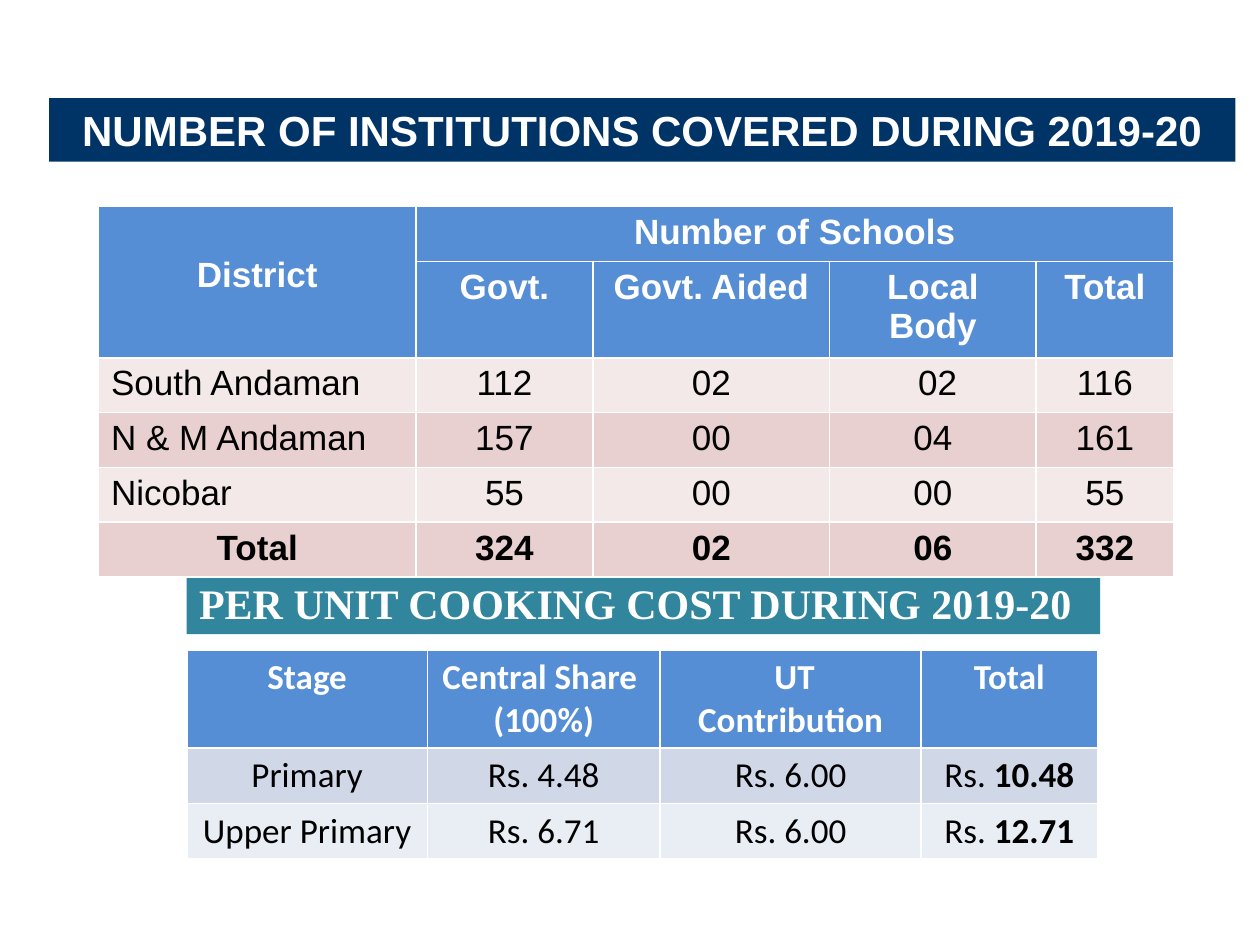
from pptx import Presentation
from pptx.dml.color import RGBColor
from pptx.enum.shapes import MSO_SHAPE
from pptx.enum.text import MSO_ANCHOR, PP_ALIGN
from pptx.util import Pt

CENTER, LEFT = PP_ALIGN.CENTER, PP_ALIGN.LEFT
TOP, MIDDLE = MSO_ANCHOR.TOP, MSO_ANCHOR.MIDDLE
WHITE = RGBColor(0xFF, 0xFF, 0xFF)
BLACK = RGBColor(0x00, 0x00, 0x00)
NAVY = RGBColor(0x00, 0x33, 0x66)
TEAL = RGBColor(0x31, 0x85, 0x9C)
HEADER_BLUE = RGBColor(0x55, 0x8E, 0xD5)
PINK_BANDS = (RGBColor(0xF4, 0xE9, 0xE9), RGBColor(0xE8, 0xD0, 0xD0))
BLUE_BANDS = (RGBColor(0xD0, 0xD8, 0xE8), RGBColor(0xE9, 0xED, 0xF4))

# Content
TITLE = "NUMBER OF INSTITUTIONS COVERED DURING 2019-20"
COST_HEADING = "PER UNIT COOKING COST DURING 2019-20"
SCHOOLS = [
    ["District", "Number of Schools", "", "", ""],
    ["", "Govt.", "Govt. Aided", "Local Body", "Total"],
    ["South Andaman", "112", "02", " 02", "116"],
    ["N & M Andaman", "157", "00", "04", "161"],
    ["Nicobar", "55", "00", "00", "55"],
    ["Total", "324", "02", "06", "332"],
]
# A tuple holds a regular part and a bold part
COSTS = [
    ["Stage", "Central Share \n(100%)", " UT Contribution", "Total"],
    ["Primary", "Rs. 4.48", "Rs. 6.00", ("Rs.", " 10.48")],
    ["Upper Primary", "Rs. 6.71", "Rs. 6.00", ("Rs.", " 12.71")],
]


def style_run(run, font_name, size, color, bold):
    run.font.name = font_name
    run.font.size = Pt(size)
    run.font.color.rgb = color
    run.font.bold = bold


def format_banner(shape, text, font_name, fill, alignment):
    shape.fill.solid()
    shape.fill.fore_color.rgb = fill
    shape.line.fill.background()
    frame = shape.text_frame
    frame.text = text
    frame.word_wrap = True
    frame.vertical_anchor = MIDDLE
    paragraph = frame.paragraphs[0]
    paragraph.alignment = alignment
    style_run(paragraph.runs[0], font_name, 24, WHITE, True)


def fill_cell(cell, content, font_name, fill, color, bold, alignment):
    cell.fill.solid()
    cell.fill.fore_color.rgb = fill
    parts = content if isinstance(content, tuple) else (content,)
    frame = cell.text_frame
    frame.text = parts[0]
    for part in parts[1:]:
        frame.paragraphs[0].add_run().text = part
    for paragraph in frame.paragraphs:
        paragraph.alignment = alignment
        for index, run in enumerate(paragraph.runs):
            style_run(run, font_name, 20, color, bold or index > 0)


def add_grid(slide, rows, left, top, widths, heights, font_name, bands,
             header_rows, left_column=False, total_row=False):
    table = slide.shapes.add_table(
        len(rows), len(widths), Pt(left), Pt(top),
        Pt(sum(widths)), Pt(sum(heights))).table
    for column, width in zip(table.columns, widths):
        column.width = Pt(width)
    for row, height in zip(table.rows, heights):
        row.height = Pt(height)
    for r, values in enumerate(rows):
        header = r < header_rows
        total = total_row and r == len(rows) - 1
        fill = HEADER_BLUE if header else bands[(r - header_rows) % 2]
        for c, value in enumerate(values):
            starts_left = left_column and c == 0 and not header and not total
            fill_cell(table.cell(r, c), value, font_name, fill,
                      WHITE if header else BLACK, header or total,
                      LEFT if starts_left else CENTER)
    return table


presentation = Presentation()
presentation.slide_width, presentation.slide_height = Pt(720), Pt(540)
slide = presentation.slides.add_slide(presentation.slide_layouts[5])

# Title banner
title = slide.shapes.title
title.left, title.top, title.width, title.height = Pt(28), Pt(56), Pt(678), Pt(36.3)
format_banner(title, TITLE, "Arial", NAVY, CENTER)

# Cooking cost heading and table
heading = slide.shapes.add_shape(
    MSO_SHAPE.RECTANGLE, Pt(106.7), Pt(326), Pt(522), Pt(36.3))
heading.shadow.inherit = False
format_banner(heading, COST_HEADING, "Times New Roman", TEAL, LEFT)
add_grid(slide, COSTS, 106.9, 371.3, [137.3, 133.1, 149.1, 100.8],
         [55, 31, 31], "Calibri", BLUE_BANDS, header_rows=1)

# Schools table with its two-level header
schools = add_grid(slide, SCHOOLS, 56.3, 118, [181.4, 101.2, 135.2, 118, 78.6],
                   [31.3, 55.2] + [31.3] * 4, "Arial", PINK_BANDS,
                   header_rows=2, left_column=True, total_row=True)
schools.cell(0, 0).merge(schools.cell(1, 0))
schools.cell(0, 1).merge(schools.cell(0, 4))
district = schools.cell(0, 0)
district.vertical_anchor = MIDDLE
district.margin_bottom = Pt(11)

presentation.save("out.pptx")
